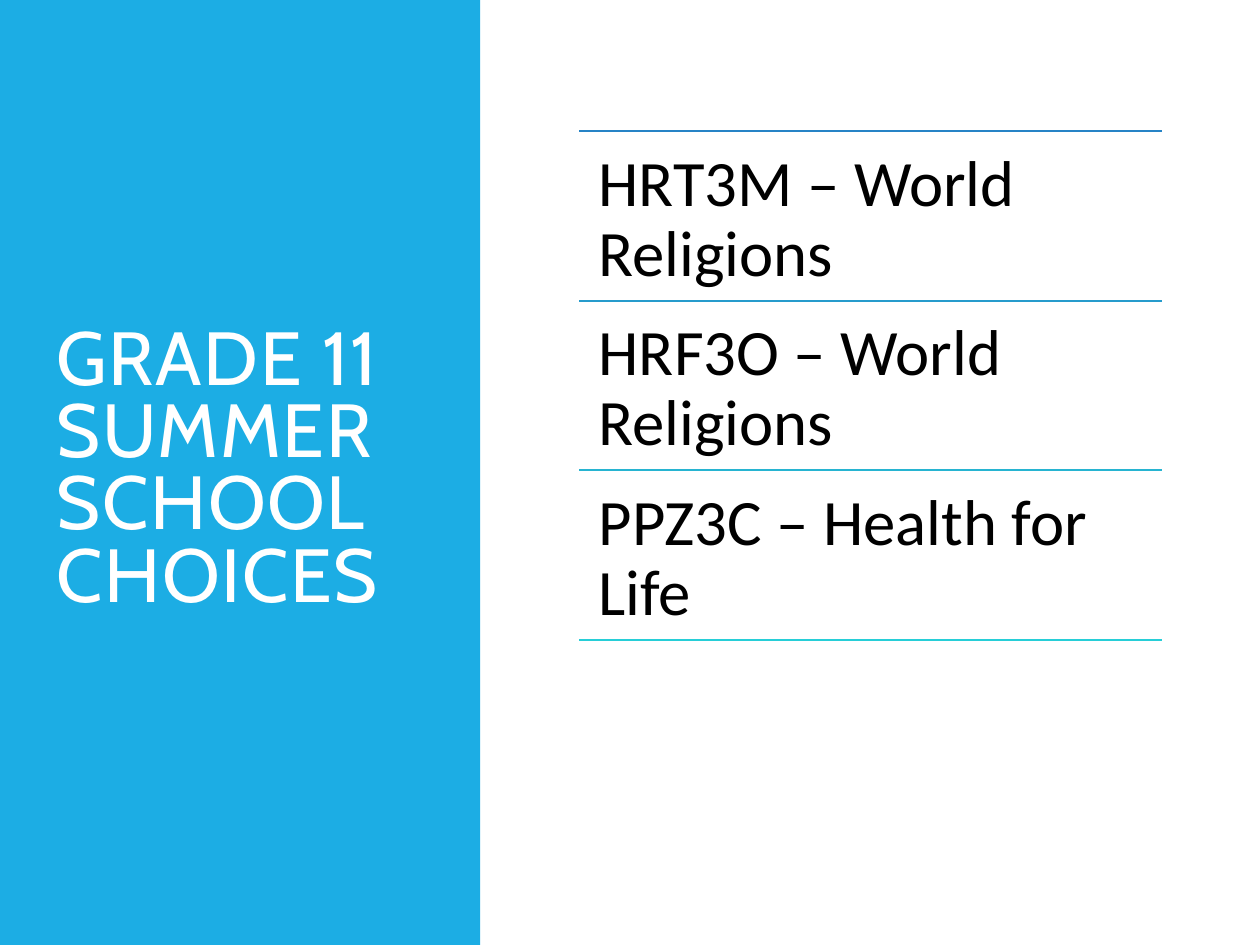
from dataclasses import dataclass

from lxml.etree import SubElement
from pptx import Presentation
from pptx.dml.color import RGBColor
from pptx.enum.shapes import MSO_CONNECTOR, MSO_SHAPE
from pptx.enum.text import MSO_ANCHOR, MSO_AUTO_SIZE, PP_ALIGN
from pptx.oxml.ns import qn
from pptx.util import Cm, Pt


@dataclass(frozen=True)
class Theme:
    panel: str = "1CADE4"
    title: str = "FFFFFF"
    text: str = "000000"
    rules: tuple = ("2683C6", "269BCC", "27B4D1", "27CED7")
    title_font: str = "Cabin"
    text_font: str = "Calibri"
    title_size: int = 43
    text_size: int = 37
    rule_width: float = 1.25


THEME = Theme()
TITLE = "GRADE 11 SUMMER SCHOOL CHOICES"
COURSES = ("HRT3M – World Religions", "HRF3O – World Religions", "PPZ3C – Health for Life")

# Course list grid, in centimetres
LIST_LEFT, LIST_TOP, LIST_WIDTH, ROW_HEIGHT = 11.68, 2.64, 11.75, 3.42


def apply(target, values):
    for name, value in values.items():
        setattr(target, name, value)


def write_text(box, text, frame_format, para_format, font_format, color):
    frame = box.text_frame
    apply(frame, {"word_wrap": True, "auto_size": MSO_AUTO_SIZE.NONE, **frame_format})
    para = frame.paragraphs[0]
    apply(para, {"alignment": PP_ALIGN.LEFT, **para_format})
    span = para.add_run()
    span.text = text
    apply(span.font, font_format)
    span.font.color.rgb = RGBColor.from_string(color)
    return span


def add_panel(slide, width, height):
    panel = slide.shapes.add_shape(MSO_SHAPE.RECTANGLE, 0, 0, width, height)
    panel.shadow.inherit = False
    panel.fill.solid()
    panel.fill.fore_color.rgb = RGBColor.from_string(THEME.panel)
    panel.line.fill.background()
    # Send the panel behind the title
    slide.shapes.element.insert(2, panel.element)


def format_title(slide):
    title = slide.shapes.title
    apply(title, {"left": Cm(0.89), "top": Cm(1.78), "width": Cm(7.57), "height": Cm(15.47)})
    span = write_text(
        title, TITLE,
        {"vertical_anchor": MSO_ANCHOR.MIDDLE},
        {"line_spacing": 0.8},
        {"name": THEME.title_font, "size": Pt(THEME.title_size)},
        THEME.title,
    )
    # Letter spacing of one point
    span.font._element.set("spc", "100")


def add_rule(slide, top, color):
    rule = slide.shapes.add_connector(
        MSO_CONNECTOR.STRAIGHT, Cm(LIST_LEFT), top, Cm(LIST_LEFT + LIST_WIDTH), top)
    rule.line.color.rgb = RGBColor.from_string(color)
    rule.line.width = Pt(THEME.rule_width)
    SubElement(rule.element.spPr, qn("a:effectLst"))


def add_course(slide, top, course):
    box = slide.shapes.add_textbox(Cm(LIST_LEFT), top, Cm(LIST_WIDTH), Cm(ROW_HEIGHT))
    margins = {f"margin_{side}": Cm(0.39) for side in ("left", "top", "right", "bottom")}
    write_text(
        box, course,
        {"vertical_anchor": MSO_ANCHOR.TOP, **margins},
        {"line_spacing": 0.9, "space_after": Pt(13)},
        {"name": THEME.text_font, "size": Pt(THEME.text_size)},
        THEME.text,
    )


def main():
    deck = Presentation()
    apply(deck, {"slide_width": Cm(25.4), "slide_height": Cm(19.05)})
    slide = deck.slides.add_slide(deck.slide_layouts.get_by_name("Title Only"))

    # Left side: coloured panel with the title
    add_panel(slide, Cm(9.68), deck.slide_height)
    format_title(slide)

    # Right side: courses separated by rules
    tops = [Cm(LIST_TOP + row * ROW_HEIGHT) for row in range(len(THEME.rules))]
    for top, color in zip(tops, THEME.rules):
        add_rule(slide, top, color)
    for top, course in zip(tops, COURSES):
        add_course(slide, top, course)

    deck.save("out.pptx")


if __name__ == "__main__":
    main()
